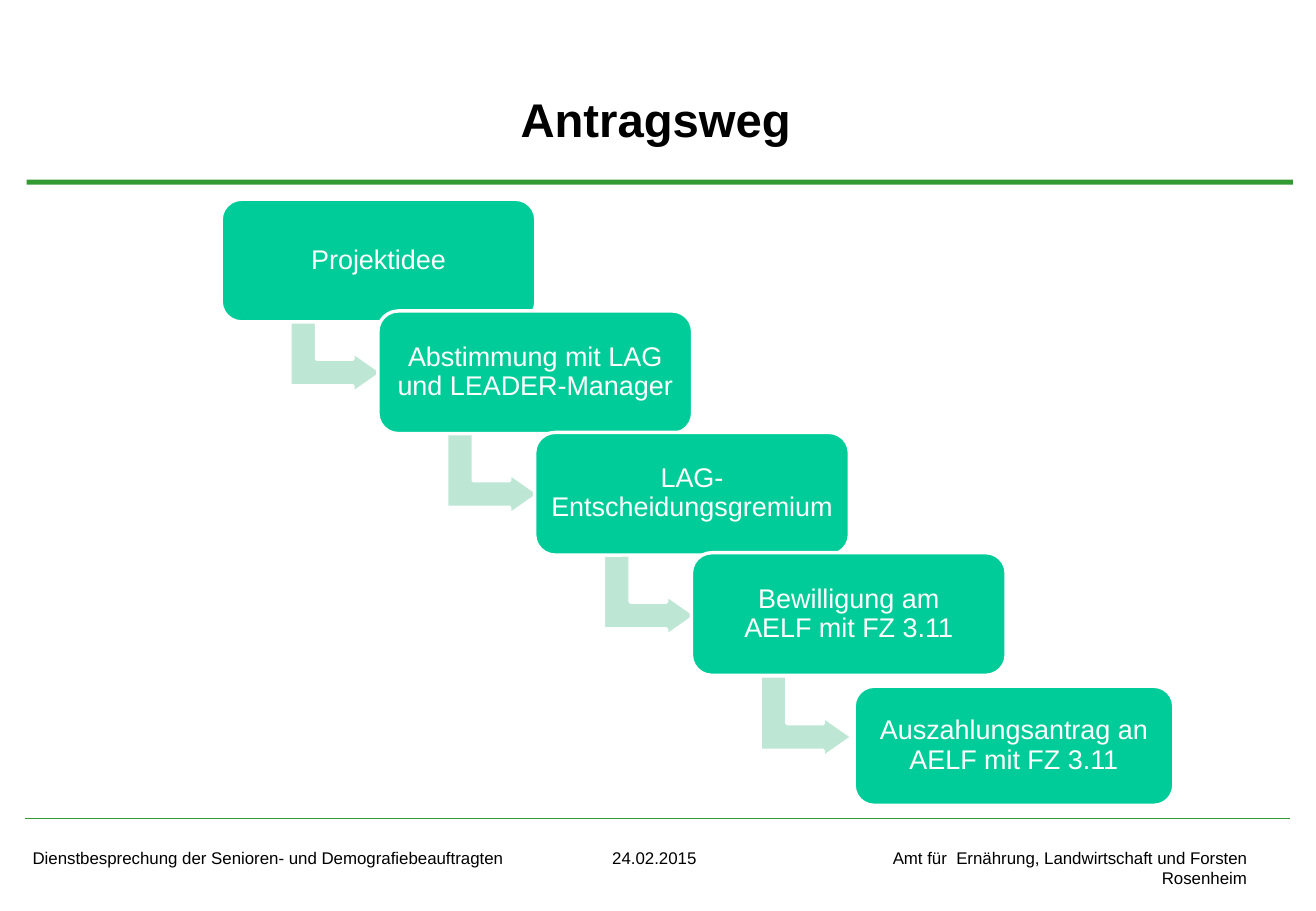
from dataclasses import dataclass

from lxml import etree
from pptx import Presentation
from pptx import util as u
from pptx.dml.color import RGBColor
from pptx.enum import shapes, text
from pptx.oxml.ns import qn

Inches = u.Inches
LEFT, CENTER, RIGHT = text.PP_ALIGN.LEFT, text.PP_ALIGN.CENTER, text.PP_ALIGN.RIGHT
TOP, MIDDLE = text.MSO_ANCHOR.TOP, text.MSO_ANCHOR.MIDDLE


@dataclass(frozen=True)
class Theme:
    font: str = "Arial"
    ink: str = "000000"
    paper: str = "FFFFFF"
    rule: str = "339933"
    step: str = "00CC99"
    arrow: str = "BDE7D4"
    title_size: int = 28
    step_size: int = 16
    footer_size: int = 10
    outline: float = 2
    hairline: float = 0.75


class SlideBuilder:
    def __init__(self, slide, theme):
        self.slide, self.theme = slide, theme

    def set_words(self, frame, lines, size, color, align=LEFT, anchor=TOP,
                  inset=(0.1, 0.05), bold=False, spacing=1.0):
        across, down = (Inches(side) for side in inset)
        frame_format = {
            "word_wrap": True, "auto_size": text.MSO_AUTO_SIZE.NONE,
            "vertical_anchor": anchor, "margin_left": across,
            "margin_right": across, "margin_top": down, "margin_bottom": down,
        }
        for name, value in frame_format.items():
            setattr(frame, name, value)
        for index, line in enumerate(lines):
            paragraph = frame.add_paragraph() if index else frame.paragraphs[0]
            paragraph.text = line
            paragraph.alignment, paragraph.line_spacing = align, spacing
            font_format = {"name": self.theme.font, "size": u.Pt(size), "bold": bold}
            for name, value in font_format.items():
                setattr(paragraph.font, name, value)
            paragraph.font.color.rgb = RGBColor.from_string(color)

    def title(self, words, left, top, width, height):
        title = self.slide.shapes.title
        place = {"left": left, "top": top, "width": width, "height": height}
        for name, value in place.items():
            setattr(title, name, Inches(value))
        self.set_words(title.text_frame, [words], self.theme.title_size,
                       self.theme.ink, CENTER, MIDDLE, bold=True)

    def shape(self, kind, place, fill, outlined=True, adjustments=()):
        shape = self.slide.shapes.add_shape(kind, *map(Inches, place))
        shape.shadow.inherit = False
        shape.fill.solid()
        shape.fill.fore_color.rgb = RGBColor.from_string(fill)
        if outlined:
            shape.line.color.rgb = RGBColor.from_string(self.theme.paper)
            shape.line.width = u.Pt(self.theme.outline)
        else:
            shape.line.fill.background()
        for index, value in enumerate(adjustments):
            shape.adjustments[index] = value
        return shape

    def step(self, words, *place):
        step = self.shape(shapes.MSO_SHAPE.ROUNDED_RECTANGLE, place,
                          self.theme.step, adjustments=[0.167])
        self.set_words(step.text_frame, [words], self.theme.step_size,
                       self.theme.paper, CENTER, MIDDLE, inset=(0.07, 0.07),
                       spacing=0.9)

    def bent_arrow(self, *place):
        arrow = self.shape(shapes.MSO_SHAPE.BENT_UP_ARROW, place,
                           self.theme.arrow, adjustments=[0.328, 0.25, 0.358])
        arrow.rotation = 90

    def line(self, *ends):
        line = self.slide.shapes.add_connector(
            shapes.MSO_CONNECTOR.STRAIGHT, *map(Inches, ends))
        line.line.color.rgb = RGBColor.from_string(self.theme.rule)
        line.line.width = u.Pt(self.theme.hairline)
        etree.SubElement(line._element.spPr, qn("a:effectLst"))

    def footer(self, lines, place, align=LEFT):
        box = self.slide.shapes.add_textbox(*map(Inches, place))
        self.set_words(box.text_frame, lines, self.theme.footer_size,
                       self.theme.ink, align)


def main():
    deck = Presentation()
    deck.slide_width, deck.slide_height = Inches(10.83), Inches(7.5)
    title_only = deck.slide_layouts[5]
    theme = Theme()
    page = SlideBuilder(deck.slides.add_slide(title_only), theme)

    # Heading and rules
    page.title("Antragsweg", 0.17, 0.54, 10.45, 0.87)
    page.shape(shapes.MSO_SHAPE.RECTANGLE, (0.22, 1.48, 10.42, 0.04),
               theme.rule, outlined=False)
    page.line(0.21, 6.74, 10.62, 6.74)

    # Staircase of steps, each with an arrow to the next
    stairs = [
        ("Projektidee", 1.64),
        ("Abstimmung mit LAG\nund LEADER-Manager", 2.56),
        ("LAG-Entscheidungsgremium", 3.56),
        ("Bewilligung am\nAELF mit FZ 3.11", 4.55),
    ]
    for index, (words, top) in enumerate(stairs):
        left = 1.82 + 1.29 * index
        page.bent_arrow(left + 0.61, 2.52 + index, 0.67, 0.76)
        page.step(words, left, top, 2.59, 1.01)
    page.step("Auszahlungsantrag an AELF mit FZ 3.11", 7.03, 5.65, 2.63, 0.98)

    # Footer
    page.footer(["Dienstbesprechung der Senioren- und Demografiebeauftragten"],
                (0.17, 6.93, 4.6, 0.34))
    page.footer(["24.02.2015"], (4.94, 6.93, 2.2, 0.31))
    page.footer(["Amt für  Ernährung, Landwirtschaft und Forsten", "Rosenheim"],
                (7.23, 6.93, 3.13, 0.44), RIGHT)

    deck.save("out.pptx")


if __name__ == "__main__":
    main()
